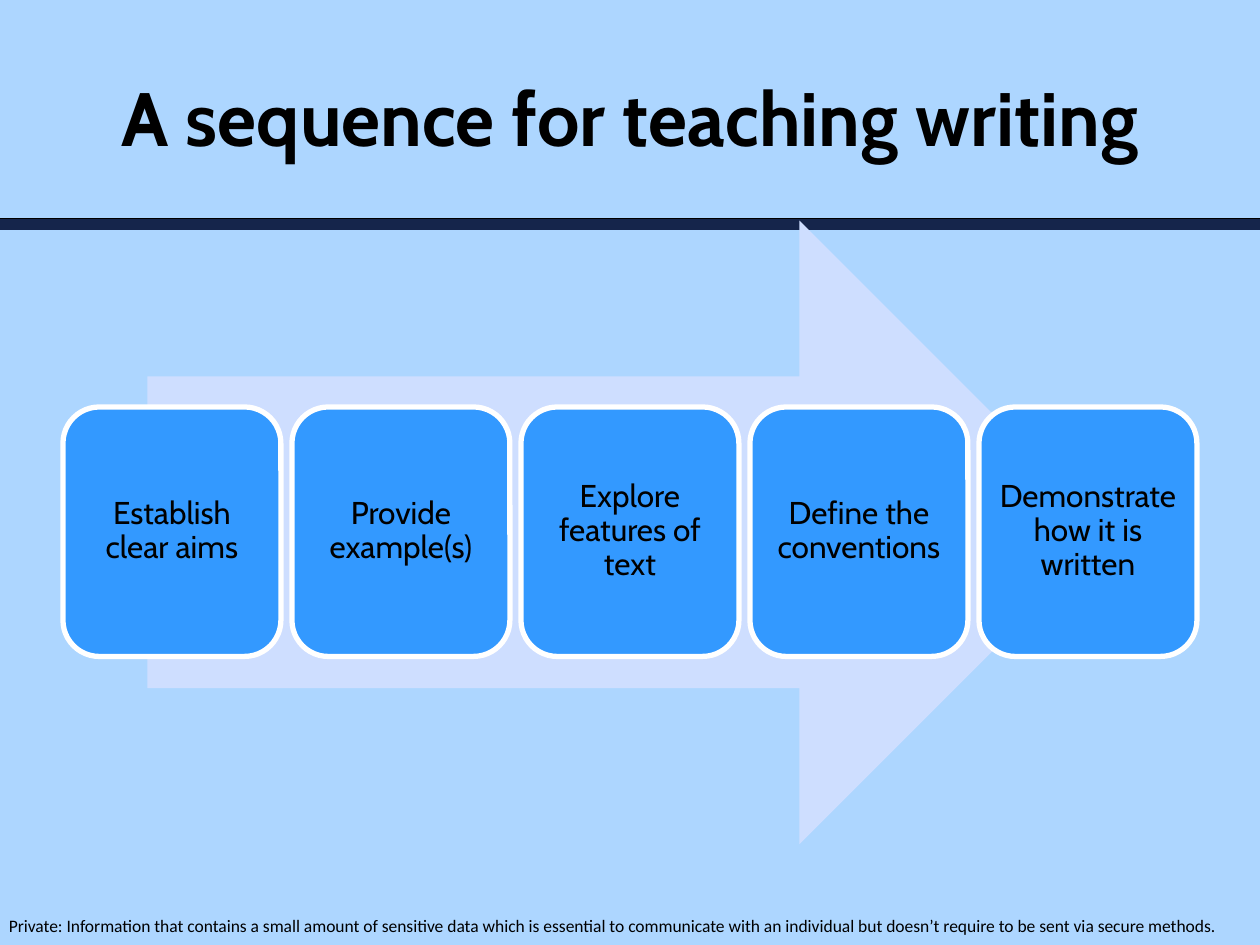
from dataclasses import dataclass

from lxml.etree import SubElement
from pptx import Presentation
from pptx.dml.color import RGBColor
from pptx.enum.shapes import MSO_CONNECTOR, MSO_SHAPE
from pptx.enum.text import MSO_ANCHOR as Anchor, PP_ALIGN as Align
from pptx.oxml.ns import qn
from pptx.util import Inches, Pt

COLORS = {
    "background": "ADD6FF",
    "rule": "15254B",
    "arrow": "CEDEFF",
    "step": "3399FF",
    "outline": "FFFFFF",
    "text": "000000",
}


@dataclass
class TextStyle:
    font: str
    size: float
    bold: bool = False
    align: Align = Align.LEFT
    anchor: Anchor = Anchor.TOP
    inset: float = 0
    line_spacing: float = 1.0


@dataclass
class Rule:
    y: float
    color: str
    width: float


TITLE = TextStyle("Cabin", 43.2, True, Align.CENTER, Anchor.MIDDLE, 0.05)
STEP = TextStyle("Cabin", 18, False, Align.CENTER, Anchor.MIDDLE, 0.07, 0.9)
FOOTER = TextStyle("Calibri", 10)

RULES = [Rule(1.78, "rule", 7), Rule(1.73, "text", 0.5)]
STEPS = [
    "Establish clear aims",
    "Provide example(s)",
    "Explore features of text",
    "Define the conventions",
    "Demonstrate how it is written",
]
SLIDE_W, SLIDE_H = 10, 7.5
MARGIN, STEP_W, STEP_H, STEP_TOP = 0.5, 1.73, 1.98, 3.23
STEP_PITCH = (SLIDE_W - 2 * MARGIN - STEP_W) / (len(STEPS) - 1)


def rgb(name: str) -> RGBColor:
    return RGBColor.from_string(COLORS[name])


def write(sp, text: str, style: TextStyle) -> None:
    tf = sp.text_frame
    tf.word_wrap = True
    tf.vertical_anchor = style.anchor
    tf.margin_left = tf.margin_right = Inches(style.inset)
    tf.margin_top = tf.margin_bottom = Inches(style.inset)
    p = tf.paragraphs[0]
    p.text = text
    p.alignment = style.align
    p.line_spacing = style.line_spacing
    p.font.name = style.font
    p.font.size = Pt(style.size)
    p.font.bold = style.bold
    p.font.color.rgb = rgb("text")


def add_text(s, box: tuple, text: str, style: TextStyle) -> None:
    write(s.shapes.add_textbox(*map(Inches, box)), text, style)


def add_block(s, kind: MSO_SHAPE, box: tuple, fill: str):
    sp = s.shapes.add_shape(kind, *map(Inches, box))
    sp.shadow.inherit = False
    sp.fill.solid()
    sp.fill.fore_color.rgb = rgb(fill)
    sp.line.fill.background()
    return sp


def add_rule(s, rule: Rule) -> None:
    y = Inches(rule.y)
    line = s.shapes.add_connector(MSO_CONNECTOR.STRAIGHT, 0, y, Inches(SLIDE_W), y)
    line.line.color.rgb = rgb(rule.color)
    line.line.width = Pt(rule.width)
    SubElement(line._element.spPr, qn("a:effectLst"))


def add_step(s, index: int, label: str) -> None:
    left = MARGIN + index * STEP_PITCH
    sp = add_block(s, MSO_SHAPE.ROUNDED_RECTANGLE, (left, STEP_TOP, STEP_W, STEP_H), "step")
    sp.line.color.rgb = rgb("outline")
    sp.line.width = Pt(3)
    write(sp, label, STEP)


def main() -> None:
    prs = Presentation()
    prs.slide_width, prs.slide_height = Inches(SLIDE_W), Inches(SLIDE_H)
    s = prs.slides.add_slide(prs.slide_layouts[6])
    s.background.fill.solid()
    s.background.fill.fore_color.rgb = rgb("background")

    # Footer and title with its double rule
    add_text(
        s,
        (0.07, 7.26, 9.66, 0.17),
        "Private: Information that contains a small amount of sensitive data which is "
        "essential to communicate with an individual but doesn’t require to be sent "
        "via secure methods.",
        FOOTER,
    )
    for rule in RULES:
        add_rule(s, rule)
    add_text(s, (0.5, 0.3, 9, 1.25), "A sequence for teaching writing", TITLE)

    # Steps in front of the arrow
    add_block(s, MSO_SHAPE.RIGHT_ARROW, (1.17, 1.75, 7.65, 4.95), "arrow")
    for index, label in enumerate(STEPS):
        add_step(s, index, label)

    prs.save("out.pptx")


if __name__ == "__main__":
    main()
